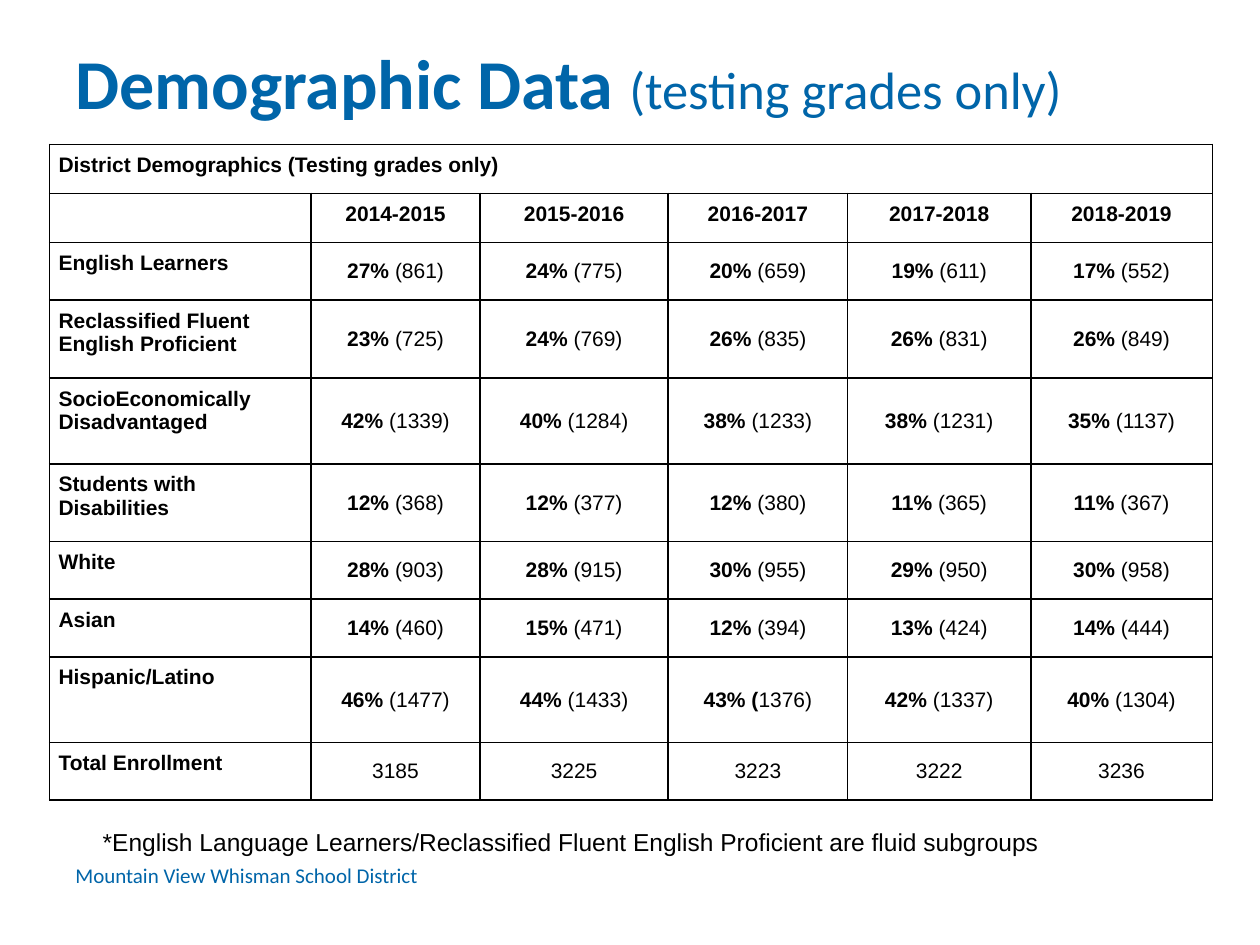
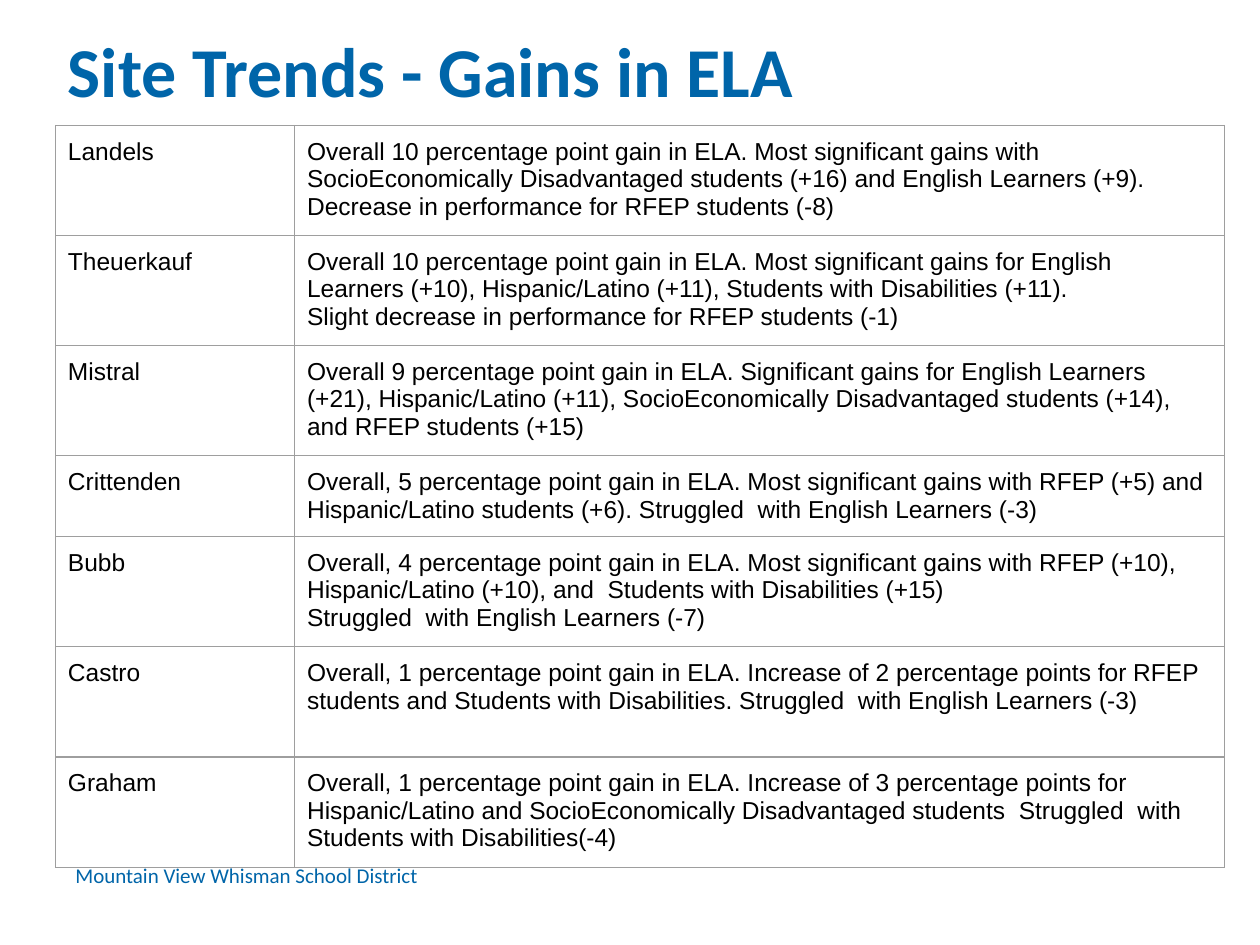
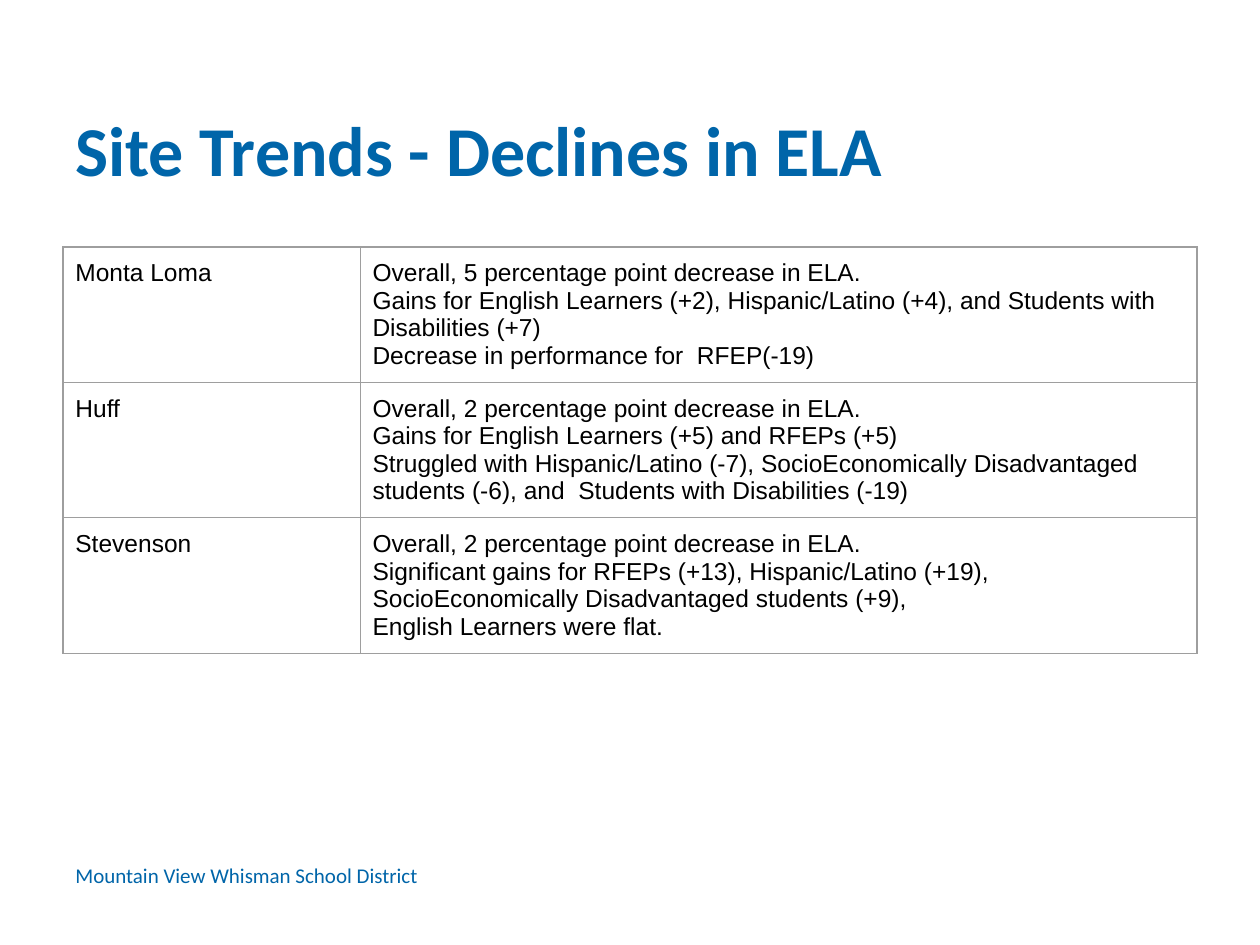
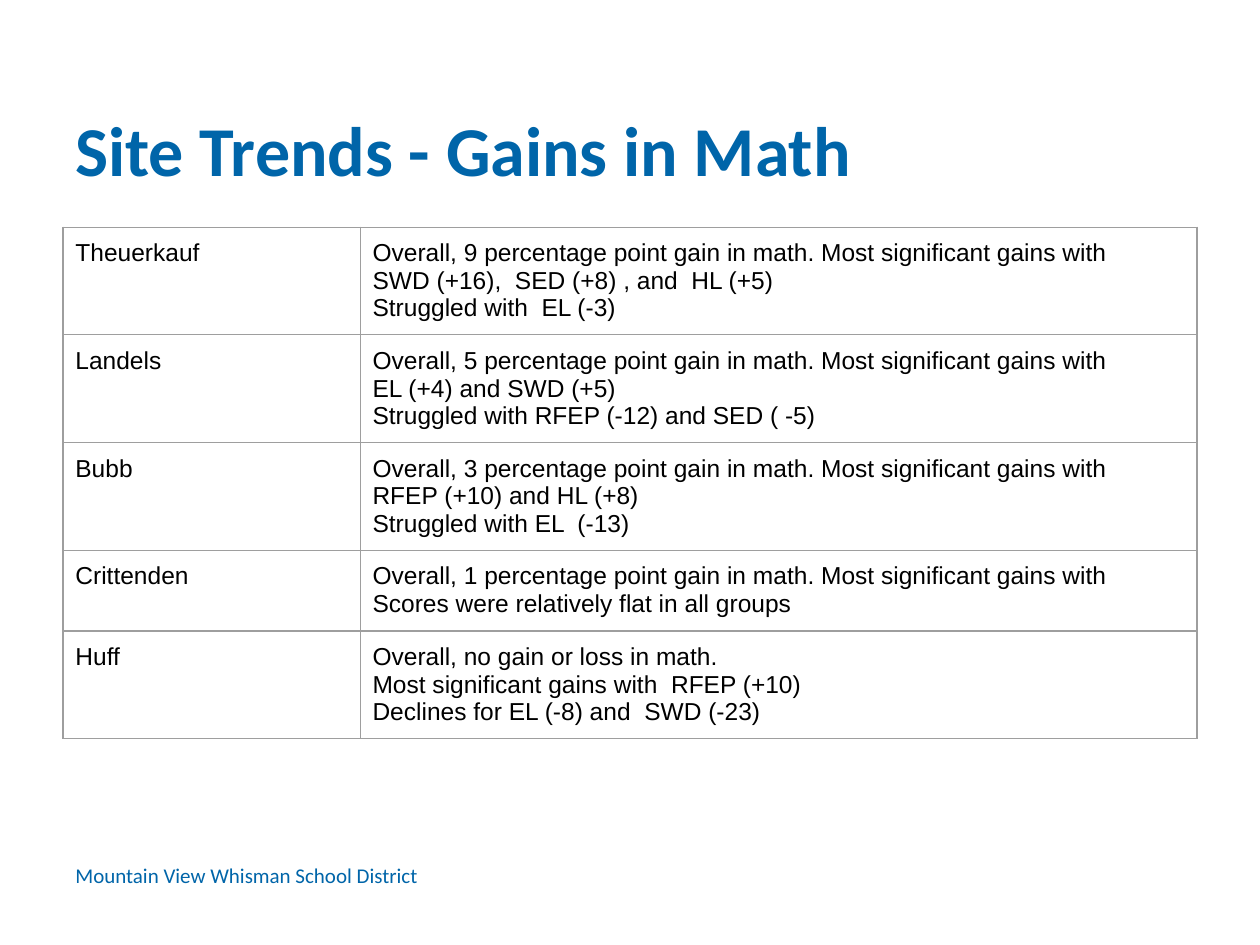
from pptx import Presentation
from pptx.dml.color import RGBColor
from pptx.enum import text
from pptx.oxml import parse_xml
from pptx.oxml import ns
from pptx.util import Cm, Pt

BLUE = RGBColor(0x00, 0x65, 0xA9)
BLACK = RGBColor(0x00, 0x00, 0x00)
GRAY = RGBColor(0x9E, 0x9E, 0x9E)
HEADING_FONT = "Calibri"
BODY_FONT = "Arial"
INSET = 0.25
LABEL_INSET = 0.18
SITE_BOTTOM_INSET = 0.1
TITLE_BOX = (1.27, 1.4, 22.86, 3.18)

YEARS = ["2014-2015", "2015-2016", "2016-2017", "2017-2018", "2018-2019"]
DEMOGRAPHICS = [
    ("English Learners", 1.16,
     ["27% |(861)", "24% |(775)", "20% |(659)", "19%| (611)", "17%| (552)"]),
    ("Reclassified Fluent English Proficient", 1.57,
     ["23% |(725)", "24%| (769)", "26% |(835)", "26%| (831)", "26%| (849)"]),
    ("SocioEconomically Disadvantaged", 1.73,
     ["42%| (1339)", "40%| (1284)", "38% |(1233)", "38%| (1231)", "35%| (1137)"]),
    ("Students with Disabilities", 1.57,
     ["12% |(368)", "12%| (377)", "12% |(380)", "11%| (365)", "11%| (367)"]),
    ("White", 1.16,
     ["28% |(903)", "28%| (915)", "30% |(955)", "29%| (950)", "30%| (958)"]),
    ("Asian", 1.16,
     ["14% |(460)", "15%| (471)", "12% |(394)", "13%| (424)", "14%| (444)"]),
    ("Hispanic/Latino", 1.73,
     ["46% |(1477)", "44%| (1433)", "43% (|1376)", "42%| (1337)", "40%| (1304)"]),
    ("Total Enrollment", 1.16, ["|3185", "|3225", "|3223", "|3222", "|3236"]),
]

ELA_GAINS = [
    ("Landels", [
        "Overall 10 percentage point gain in ELA. Most significant gains with "
        "SocioEconomically Disadvantaged students (+16) and English Learners (+9).  "
        "Decrease in performance for RFEP students (-8)"]),
    ("Theuerkauf", [
        "Overall 10 percentage point gain in ELA. Most significant gains for English "
        "Learners (+10), Hispanic/Latino (+11), Students with Disabilities (+11).",
        "Slight decrease in performance for RFEP students (-1)"]),
    ("Mistral", [
        "Overall 9 percentage point gain in ELA. Significant gains for English Learners "
        "(+21), Hispanic/Latino (+11), SocioEconomically Disadvantaged students (+14),  "
        "and RFEP students (+15)"]),
    ("Crittenden", [
        "Overall, 5 percentage point gain in ELA. Most significant gains with RFEP (+5) and  "
        "Hispanic/Latino students (+6). Struggled  with English Learners (-3)"]),
    ("Bubb", [
        "Overall, 4 percentage point gain in ELA. Most significant gains with RFEP (+10), "
        "Hispanic/Latino (+10), and  Students with Disabilities (+15)",
        "Struggled  with English Learners (-7)"]),
    ("Castro", [
        "Overall, 1 percentage point gain in ELA. Increase of 2 percentage points for RFEP "
        "students and Students with Disabilities. Struggled  with English Learners (-3)"]),
    ("Graham", [
        "Overall, 1 percentage point gain in ELA. Increase of 3 percentage points for "
        "Hispanic/Latino and SocioEconomically Disadvantaged students  Struggled  with "
        "Students with Disabilities(-4)"]),
]

ELA_DECLINES = [
    ("Monta Loma", [
        "Overall, 5 percentage point decrease in ELA.",
        "Gains for English Learners (+2), Hispanic/Latino (+4), and Students with "
        "Disabilities (+7)",
        "Decrease in performance for  RFEP(-19)"]),
    ("Huff", [
        "Overall, 2 percentage point decrease in ELA.",
        "Gains for English Learners (+5) and RFEPs (+5)",
        "Struggled with Hispanic/Latino (-7), SocioEconomically Disadvantaged "
        "students (-6), and  Students with Disabilities (-19)"]),
    ("Stevenson", [
        "Overall, 2 percentage point decrease in ELA.",
        "Significant gains for RFEPs (+13), Hispanic/Latino (+19), "
        "SocioEconomically Disadvantaged students (+9),",
        "English Learners were flat."]),
]

MATH_LEAD = "percentage point gain in math. Most significant gains with"
MATH_GAINS = [
    ("Theuerkauf", [
        f"Overall, 9 {MATH_LEAD}",
        "SWD (+16),  SED (+8) , and  HL (+5)",
        "Struggled with  EL (-3)"]),
    ("Landels", [
        f"Overall, 5 {MATH_LEAD}",
        "EL (+4) and SWD (+5)",
        "Struggled with RFEP (-12) and SED ( -5)"]),
    ("Bubb", [
        f"Overall, 3 {MATH_LEAD}  RFEP (+10) and HL (+8)",
        "Struggled with EL  (-13)"]),
    ("Crittenden", [
        f"Overall, 1 {MATH_LEAD}",
        "Scores were relatively flat in all groups"]),
    ("Huff", [
        "Overall, no gain or loss in math.",
        "Most significant gains with  RFEP (+10)",
        "Declines for EL (-8) and  SWD (-23)"]),
]


def style_font(font, name, size, color, bold=False):
    font.name = name
    font.size = Pt(size)
    font.color.rgb = color
    font.bold = bold


def set_insets(holder, side, end):
    holder.margin_left = holder.margin_right = Cm(side)
    holder.margin_top = holder.margin_bottom = Cm(end)


def add_text(page, box, words, name, size, color, inset=INSET):
    frame = page.shapes.add_textbox(*map(Cm, box)).text_frame
    frame.word_wrap = True
    set_insets(frame, INSET, inset)
    para = frame.paragraphs[0]
    para.add_run().text = words
    style_font(para.font, name, size, color)
    return frame


def add_title(page, box, heading, note=""):
    frame = add_text(page, box, heading, HEADING_FONT, 40, BLUE)
    frame.vertical_anchor = text.MSO_ANCHOR.MIDDLE
    para = frame.paragraphs[0]
    para.runs[0].font.bold = True
    if note:
        span = para.add_run()
        span.text = note
        span.font.size = Pt(30)


def add_footer(page):
    add_text(page, (1.27, 17.25, 9, 0.76), "Mountain View Whisman School District",
             HEADING_FONT, 12, BLUE, inset=0.13)


def add_page(deck, title_box, heading, note=""):
    page = deck.slides.add_slide(deck.slide_layouts[6])
    add_footer(page)
    add_title(page, title_box, heading, note)
    return page


def add_borders(cell, color, width):
    properties = cell._tc.get_or_add_tcPr()
    for index, side in enumerate("LRTB"):
        properties.insert(index, parse_xml(
            f'<a:ln{side} {ns.nsdecls("a")} w="{Pt(width)}"><a:solidFill>'
            f'<a:srgbClr val="{color}"/></a:solidFill></a:ln{side}>'))


def add_grid(page, left, top, columns, rows, color, width):
    table = page.shapes.add_table(len(rows), len(columns), Cm(left), Cm(top),
                                  Cm(sum(columns)), Cm(sum(rows))).table
    table.first_row = table.horz_banding = False
    for column, size in zip(table.columns, columns):
        column.width = Cm(size)
    for row, size in zip(table.rows, rows):
        row.height = Cm(size)
    for cell in table.iter_cells():
        cell.fill.background()
        add_borders(cell, color, width)
        set_insets(cell, INSET, INSET)
    return table


def fill_cell(cell, lines, size, bold=False):
    cell.text_frame.text = "\n".join(lines)
    for para in cell.text_frame.paragraphs:
        style_font(para.font, BODY_FONT, size, BLACK, bold)


def fill_label(cell, words, centered=False):
    fill_cell(cell, [words], 12, bold=True)
    set_insets(cell, LABEL_INSET, LABEL_INSET)
    if centered:
        cell.text_frame.paragraphs[0].alignment = text.PP_ALIGN.CENTER


def fill_share(cell, share):
    cell.vertical_anchor = text.MSO_ANCHOR.MIDDLE
    para = cell.text_frame.paragraphs[0]
    para.alignment = text.PP_ALIGN.CENTER
    style_font(para.font, BODY_FONT, 12, BLACK)
    percent, count = share.split("|")
    for words, bold in ((percent, True), (count, False)):
        if words:
            span = para.add_run()
            span.text = words
            span.font.bold = bold


def add_demographic_table(page, left, top):
    columns = [5.27, 3.41, 3.79, 3.62, 3.69, 3.66]
    rows = [0.99, 0.99] + [height for _, height, _ in DEMOGRAPHICS]
    table = add_grid(page, left, top, columns, rows, BLACK, 1)
    table.cell(0, 0).merge(table.cell(0, len(YEARS)))
    fill_label(table.cell(0, 0), "District Demographics (Testing grades only)")
    set_insets(table.cell(1, 0), LABEL_INSET, 0)
    for column, year in enumerate(YEARS, 1):
        fill_label(table.cell(1, column), year, centered=True)
    for row, (group, _, shares) in enumerate(DEMOGRAPHICS, 2):
        fill_label(table.cell(row, 0), group)
        for column, share in enumerate(shares, 1):
            fill_share(table.cell(row, column), share)


def add_site_table(page, left, top, columns, row_height, sites):
    rows = [1.63 if site == "Crittenden" else row_height for site, _ in sites]
    table = add_grid(page, left, top, columns, rows, GRAY, 0.75)
    for cell in table.iter_cells():
        cell.margin_bottom = Cm(SITE_BOTTOM_INSET)
    for row, (site, lines) in enumerate(sites):
        fill_cell(table.cell(row, 0), [site], 14)
        fill_cell(table.cell(row, 1), lines, 14)


def demographics_page(deck):
    page = add_page(deck, (1.27, 0.66, 22.86, 1.98),
                    "Demographic Data ", "(testing grades only)")
    add_text(page, (1.82, 16.42, 21.79, 0.91),
             "*English Language Learners/Reclassified Fluent English Proficient "
             "are fluid subgroups", BODY_FONT, 14, BLACK)
    add_demographic_table(page, 1, 2.91)


def ela_gains_page(deck):
    page = add_page(deck, (1.12, 0.28, 22.86, 2.26), "Site Trends - Gains in ELA")
    add_site_table(page, 1.12, 2.53, [4.82, 18.75], 2.22, ELA_GAINS)


def site_page(deck, heading, top, row_height, sites):
    page = add_page(deck, TITLE_BOX, heading)
    add_site_table(page, 1.27, top, [5.99, 16.87], row_height, sites)


def main():
    deck = Presentation()
    deck.slide_width = Cm(25.4)
    deck.slide_height = Cm(19.05)
    demographics_page(deck)
    ela_gains_page(deck)
    site_page(deck, "Site Trends - Declines in ELA", 4.98, 2.73, ELA_DECLINES)
    site_page(deck, "Site Trends - Gains in Math", 4.58, 2.17, MATH_GAINS)
    deck.save("out.pptx")


if __name__ == "__main__":
    main()
